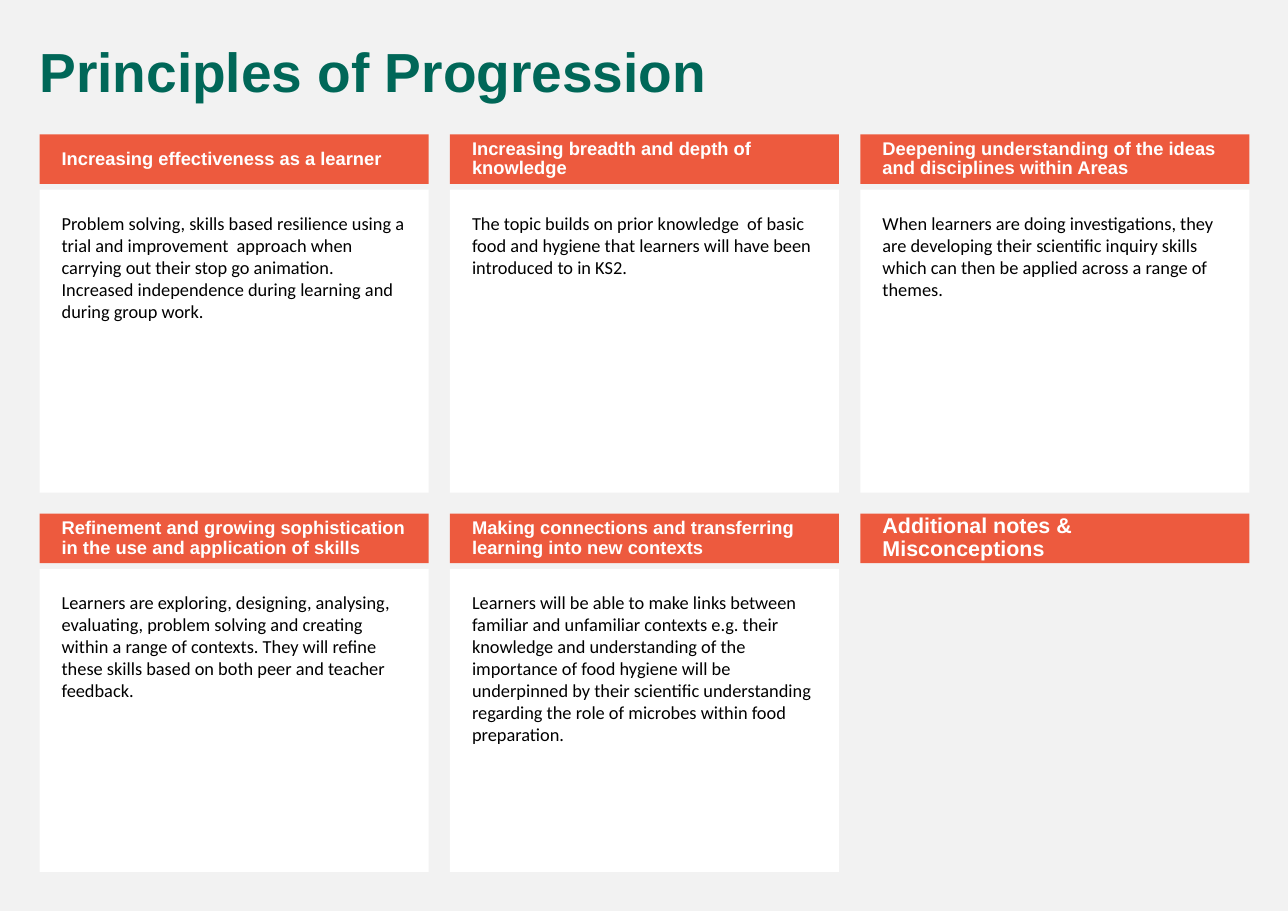
import pptx
import pptx.util
import pptx.dml.color
import pptx.enum.shapes
import pptx.enum.text

Pt = pptx.util.Pt
ANCHOR = pptx.enum.text.MSO_ANCHOR

# Content: heading, heading size, body paragraphs
TITLE = "Principles of Progression"
CARDS = [
    ("Increasing effectiveness as a learner", 12, [
        "Problem solving, skills based resilience using a trial and improvement  approach when "
        "carrying out their stop go animation.",
        "Increased independence during learning and during group work."]),
    ("Increasing breadth and depth of knowledge", 12, [
        "The topic builds on prior knowledge  of basic food and hygiene that learners will have "
        "been introduced to in KS2."]),
    ("Deepening understanding of the ideas and disciplines within Areas", 12, [
        "When learners are doing investigations, they are developing their scientific inquiry "
        "skills which can then be applied across a range of themes."]),
    ("Refinement and growing sophistication in the use and application of skills", 12, [
        "Learners are exploring, designing, analysing, evaluating, problem solving and creating "
        "within a range of contexts. They will refine these skills based on both peer and "
        "teacher feedback."]),
    ("Making connections and transferring learning into new contexts", 12, [
        "Learners will be able to make links between familiar and unfamiliar contexts e.g. their "
        "knowledge and understanding of the importance of food hygiene will be underpinned by "
        "their scientific understanding regarding the role of microbes within food preparation."]),
    ("Additional notes & Misconceptions", 14, []),
]
COLORS = {"page": "F2F2F2", "title": "006758", "band": "ED5A3E",
          "panel": "FFFFFF", "heading": "FFFFFF", "body": "000000"}

# Card grid, in points
COLS = 3
LEFT, TOP = 25.9, 87.8
COL_STEP, ROW_STEP = 268.2, 247.9
CARD_W, BAND_H, PANEL_H = 254.2, 32.4, 198
PANEL_DROP = 36.2


def rgb(name):
    return pptx.dml.color.RGBColor.from_string(COLORS[name])


def write(sp, paragraphs, *, color, font, size, bold=False, line=None, before=0,
          insets=(7.2, 3.6, 7.2, 3.6), anchor=ANCHOR.TOP):
    tf = sp.text_frame
    tf.word_wrap = True
    tf.vertical_anchor = anchor
    tf.margin_left, tf.margin_top, tf.margin_right, tf.margin_bottom = map(Pt, insets)
    for i, text in enumerate(paragraphs):
        p = tf.add_paragraph() if i else tf.paragraphs[0]
        p.alignment = pptx.enum.text.PP_ALIGN.LEFT
        p.space_before = Pt(before)
        if line:
            p.line_spacing = line
        r = p.add_run()
        r.text = text
        r.font.name, r.font.size, r.font.bold = font, Pt(size), bold
        r.font.color.rgb = rgb(color)


def add_box(slide, x, y, height, fill):
    sp = slide.shapes.add_shape(pptx.enum.shapes.MSO_SHAPE.RECTANGLE,
                                Pt(x), Pt(y), Pt(CARD_W), Pt(height))
    sp.shadow.inherit = False
    sp.fill.solid()
    sp.fill.fore_color.rgb = rgb(fill)
    sp.line.fill.background()
    return sp


def main():
    prs = pptx.Presentation()
    prs.slide_width, prs.slide_height = Pt(841.68), Pt(595.44)
    slide = prs.slides.add_slide(prs.slide_layouts[6])
    slide.background.fill.solid()
    slide.background.fill.fore_color.rgb = rgb("page")

    # Title
    sp = slide.shapes.add_textbox(Pt(18.7), Pt(25.9), Pt(797.8), Pt(46.8))
    write(sp, [TITLE], color="title", font="Arial", size=36, bold=True, line=0.9, before=11)

    # Cards: white panel below an orange heading band
    for i, (heading, size, body) in enumerate(CARDS):
        row, col = divmod(i, COLS)
        x, y = LEFT + col * COL_STEP, TOP + row * ROW_STEP
        if body:
            panel = add_box(slide, x, y + PANEL_DROP, PANEL_H, "panel")
            write(panel, body, color="body", font="Calibri", size=12, insets=(14.4,) * 4)
        band = add_box(slide, x, y, BAND_H, "band")
        write(band, [heading], color="heading", font="Arial", size=size, bold=True, line=0.9,
              before=11, insets=(14.4, 3.6, 7.2, 3.6), anchor=ANCHOR.MIDDLE)

    prs.save("out.pptx")


if __name__ == "__main__":
    main()
